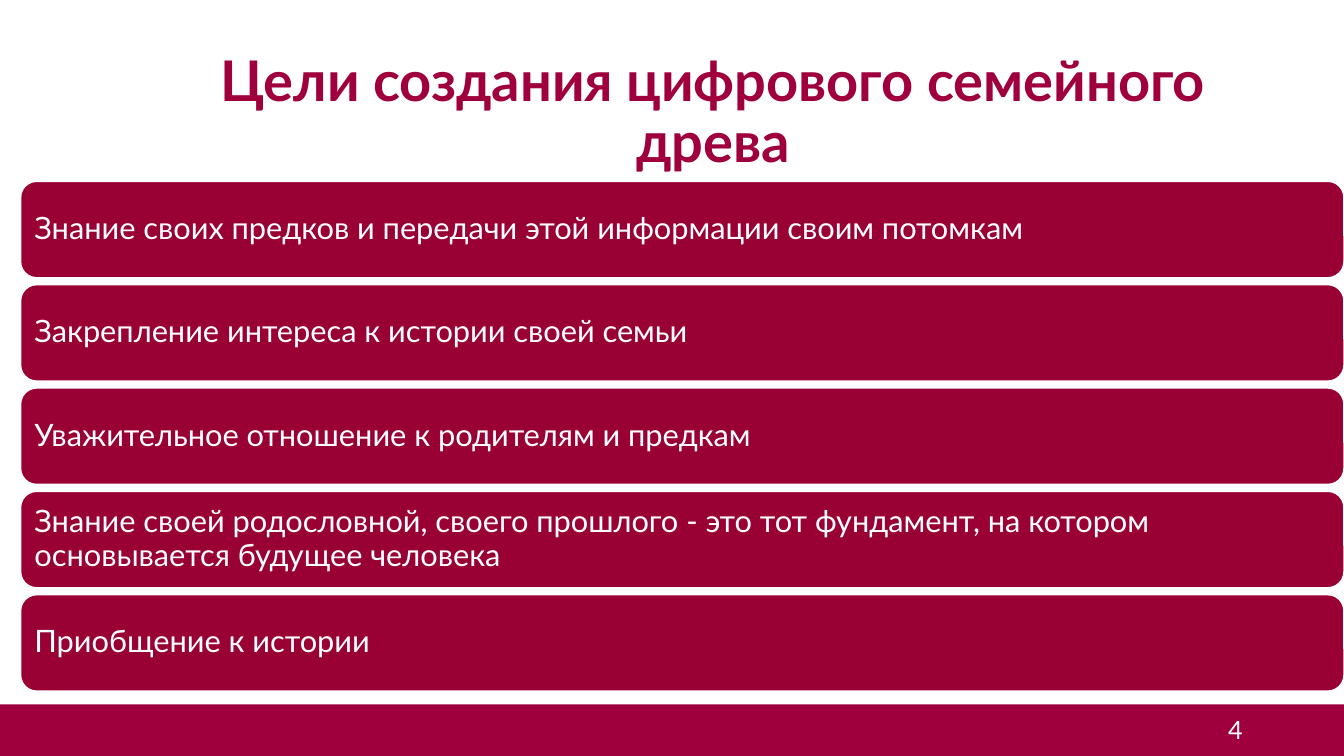
from pptx import Presentation
from pptx.dml.color import RGBColor
from pptx.enum.shapes import MSO_SHAPE
from pptx.enum.text import MSO_ANCHOR, MSO_AUTO_SIZE, PP_ALIGN
from pptx.util import Cm, Pt

RECT, ROUNDED = MSO_SHAPE.RECTANGLE, MSO_SHAPE.ROUNDED_RECTANGLE
MIDDLE = MSO_ANCHOR.MIDDLE
LEFT, CENTER, RIGHT = PP_ALIGN.LEFT, PP_ALIGN.CENTER, PP_ALIGN.RIGHT

# Content
TITLE = "Цели создания цифрового семейного древа"
GOALS = [
    "Знание своих предков и передачи этой информации своим потомкам",
    "Закрепление интереса к истории своей семьи",
    "Уважительное отношение к родителям и предкам",
    "Знание своей родословной, своего прошлого - это тот фундамент, "
    "на котором основывается будущее человека",
    "Приобщение к истории",
]
PAGE = "4"

# Style and layout
COLORS = {"brand": "9F003D", "bar": "990033", "white": "FFFFFF"}
FONT = "Lato"
SLIDE_W, SLIDE_H = Cm(33.87), Cm(19.05)
FOOTER_H = Cm(1.3)
BAR_LEFT, BAR_TOP, BAR_H, BAR_STEP = Cm(0.52), Cm(4.57), Cm(2.43), Cm(2.604)
BAR_INSET = Cm(0.23)


def rgb(name):
    return RGBColor.from_string(COLORS[name])


def set_text(tf, text, size, color, align, spacing=1.0, bold=False):
    tf.word_wrap = True
    tf.vertical_anchor = MIDDLE
    p = tf.paragraphs[0]
    p.text = text
    p.alignment = align
    p.line_spacing = spacing
    p.font.name, p.font.size, p.font.bold = FONT, Pt(size), bold
    p.font.color.rgb = rgb(color)


def add_block(s, kind, left, top, width, height, fill):
    sp = s.shapes.add_shape(kind, left, top, width, height)
    sp.shadow.inherit = False
    sp.fill.solid()
    sp.fill.fore_color.rgb = rgb(fill)
    return sp


prs = Presentation()
prs.slide_width, prs.slide_height = SLIDE_W, SLIDE_H
s = prs.slides.add_slide(prs.slide_layouts[5])

# Title
title = s.shapes.title
title.left, title.top, title.width, title.height = Cm(4.11), Cm(1.4), Cm(27.71), Cm(2.95)
set_text(title.text_frame, TITLE, 40, "brand", CENTER, 0.9, True)
title.text_frame.auto_size = MSO_AUTO_SIZE.NONE

# Footer band
band = add_block(s, RECT, 0, SLIDE_H - FOOTER_H, SLIDE_W, FOOTER_H, "brand")
band.line.fill.background()

# Goal bars
for i, goal in enumerate(GOALS):
    bar = add_block(s, ROUNDED, BAR_LEFT, BAR_TOP + i * BAR_STEP,
                    SLIDE_W - BAR_LEFT, BAR_H, "bar")
    bar.line.color.rgb = rgb("white")
    bar.line.width = Pt(1)
    tf = bar.text_frame
    tf.margin_left = tf.margin_right = tf.margin_top = tf.margin_bottom = BAR_INSET
    set_text(tf, goal, 22, "white", LEFT, 0.9)

# Page number
number = s.shapes.add_textbox(Cm(23.95), Cm(17.88), Cm(7.62), Cm(1.02))
set_text(number.text_frame, PAGE, 18, "white", RIGHT)

prs.save("out.pptx")
